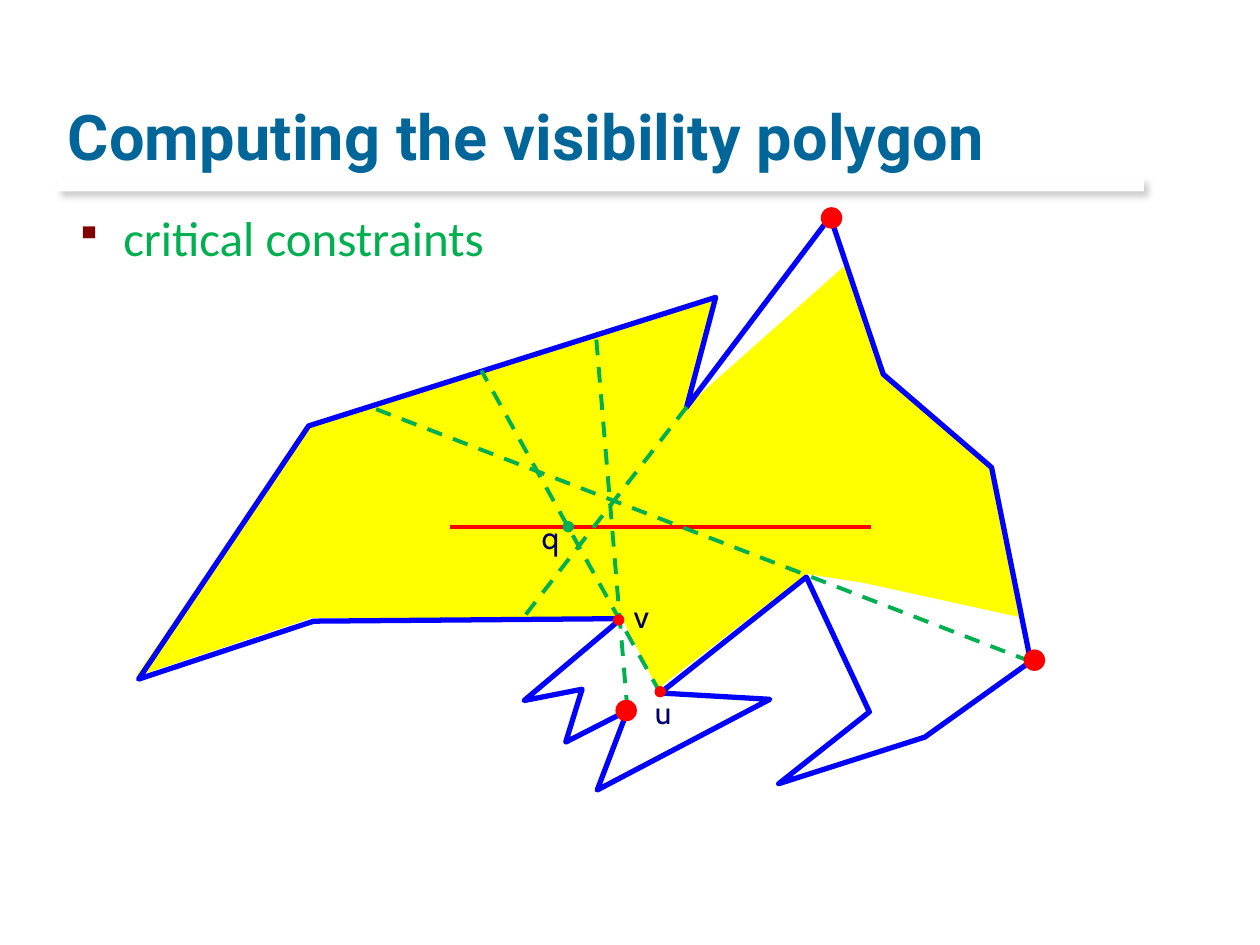
from lxml import etree
from pptx import Presentation
from pptx.dml.color import RGBColor
from pptx.enum.dml import MSO_LINE
from pptx.enum.shapes import MSO_CONNECTOR, MSO_SHAPE
from pptx.enum.text import MSO_ANCHOR, MSO_AUTO_SIZE
from pptx.oxml import parse_xml
from pptx.oxml.ns import nsdecls, qn
from pptx.util import Inches, Pt

# Content: points and lengths in inches
TITLE = "Computing the visibility polygon"
BULLET = "critical constraints"
BLUE, YELLOW, GREEN, RED = "0000FF", "FFFF00", "00B050", "FF0000"
TEAL, NAVY, MAROON, WHITE = "006699", "000066", "800000", "FFFFFF"

VISIBLE_REGION = [
    (2.47, 4.9), (1.09, 5.36), (2.45, 3.39), (5.67, 2.36), (5.45, 3.23),
    (6.71, 2.11), (7.01, 2.98), (7.85, 3.7), (8.08, 4.89), (6.85, 4.62),
    (6.4, 4.55), (5.22, 5.46), (4.94, 4.9),
]
POLYGON = [
    (2.49, 4.93), (4.93, 4.91), (4.16, 5.56), (4.62, 5.47), (4.49, 5.89),
    (4.98, 5.64), (4.74, 6.27), (6.11, 5.55), (5.24, 5.5), (6.4, 4.58),
    (6.9, 5.65), (6.18, 6.22), (7.34, 5.85), (8.18, 5.25), (7.87, 3.71),
    (7.01, 2.97), (6.59, 1.72), (5.45, 3.23), (5.68, 2.36), (2.45, 3.38),
    (1.1, 5.39),
]
SEGMENT = ((3.57, 4.18), (6.91, 4.18))
CONSTRAINTS = [
    ((5.24, 5.5), (3.82, 2.94)),
    ((5.45, 3.23), (4.14, 4.92)),
    ((4.98, 5.64), (4.73, 2.66)),
    ((8.18, 5.25), (2.94, 3.23)),
]
SMALL, LARGE = 0.08, 0.16
DOTS = [  # centre, diameter, colour
    ((4.51, 4.18), SMALL, GREEN),
    ((5.24, 5.49), SMALL, RED),
    ((4.91, 4.92), SMALL, RED),
    ((8.21, 5.24), LARGE, RED),
    ((6.6, 1.73), LARGE, RED),
    ((4.97, 5.64), LARGE, RED),
]
LABELS = [("u", 5.1, 5.45, 0.33), ("v", 4.93, 4.69, 0.31), ("q", 4.2, 4.06, 0.33)]

presentation = Presentation()
presentation.slide_width, presentation.slide_height = Inches(10), Inches(7.5)
slide = presentation.slides.add_slide(presentation.slide_layouts[6])
shapes = slide.shapes


def rgb(value):
    return RGBColor.from_string(value)


def paint(shape, fill=None, line=None, width=0.75):
    shape.shadow.inherit = False
    if fill:
        shape.fill.solid()
        shape.fill.fore_color.rgb = rgb(fill)
    else:
        shape.fill.background()
    if line:
        shape.line.color.rgb = rgb(line)
        shape.line.width = Pt(width)
    else:
        shape.line.fill.background()


def add_polygon(points, **colours):
    # The builder rounds to whole units, so corners are given in EMU
    first, *rest = [(Inches(x), Inches(y)) for x, y in points]
    builder = shapes.build_freeform(*first)
    builder.add_line_segments(rest, close=True)
    polygon = builder.convert_to_shape()
    paint(polygon, **colours)
    outline = polygon.line._get_or_add_ln()
    outline.set("cap", "rnd")
    etree.SubElement(outline, qn("a:round"))


def add_line(start, end, colour, dashed=False):
    ends = [Inches(value) for value in (*start, *end)]
    line = shapes.add_connector(MSO_CONNECTOR.STRAIGHT, *ends)
    line.line.color.rgb = rgb(colour)
    line.line.width = Pt(2.25)
    if dashed:
        line.line.dash_style = MSO_LINE.DASH
    etree.SubElement(line._element.spPr, qn("a:effectLst"))


def add_dot(centre, diameter, colour):
    left, top = (Inches(value - diameter / 2) for value in centre)
    dot = shapes.add_shape(MSO_SHAPE.OVAL, left, top, Inches(diameter), Inches(diameter))
    paint(dot, fill=colour, line=colour)


def add_text(words, box, size, font, colour, bold=False, wrap=True):
    holder = shapes.add_textbox(*(Inches(value) for value in box))
    holder.text_frame.word_wrap = wrap
    run = holder.text_frame.paragraphs[0].add_run()
    run.text = words
    run.font.size, run.font.name, run.font.bold = Pt(size), font, bold
    run.font.color.rgb = rgb(colour)
    return holder.text_frame


# Soft rule under the title
rule = shapes.add_shape(MSO_SHAPE.RECTANGLE, Inches(0.45), Inches(1.41), Inches(8.63), Inches(0.11))
paint(rule, fill=WHITE)
rule._element.spPr.find(qn("a:effectLst")).append(parse_xml(
    f'<a:outerShdw {nsdecls("a")} blurRad="{Pt(4)}" dist="{Pt(3)}" dir="2700000">'
    '<a:srgbClr val="000000"><a:alpha val="20000"/></a:srgbClr></a:outerShdw>'))

# Polygon and the part of it that is visible
add_polygon(VISIBLE_REGION, fill=YELLOW, line=YELLOW)
add_polygon(POLYGON, line=BLUE, width=3)

# Title and bullet
title = add_text(TITLE, (0.44, 0.17, 8.5, 1.25), 36, "Roboto", TEAL, bold=True)
title.vertical_anchor = MSO_ANCHOR.BOTTOM
title.paragraphs[0].runs[0]._r.get_or_add_rPr().set("spc", "10")
bullet = add_text(BULLET, (0.5, 1.6, 8.95, 0.51), 28, "Calibri", GREEN)
bullet_format = bullet.paragraphs[0]._p.get_or_add_pPr()
bullet_format.set("marL", str(Inches(0.38)))
bullet_format.set("indent", str(-Inches(0.38)))
bullet_colour = etree.SubElement(bullet_format, qn("a:buClr"))
etree.SubElement(bullet_colour, qn("a:srgbClr"), val=MAROON)
etree.SubElement(bullet_format, qn("a:buSzPct"), val="75000")
etree.SubElement(bullet_format, qn("a:buChar"), char="▪")

# Query segment, critical constraints and vertices
add_line(*SEGMENT, RED)
for start, end in CONSTRAINTS:
    add_line(start, end, GREEN, dashed=True)
for dot in DOTS:
    add_dot(*dot)
for name, left, top, width in LABELS:
    label = add_text(name, (left, top, width, 0.4), 18, "Cabin", NAVY, wrap=False)
    label.auto_size = MSO_AUTO_SIZE.SHAPE_TO_FIT_TEXT

presentation.save("out.pptx")
